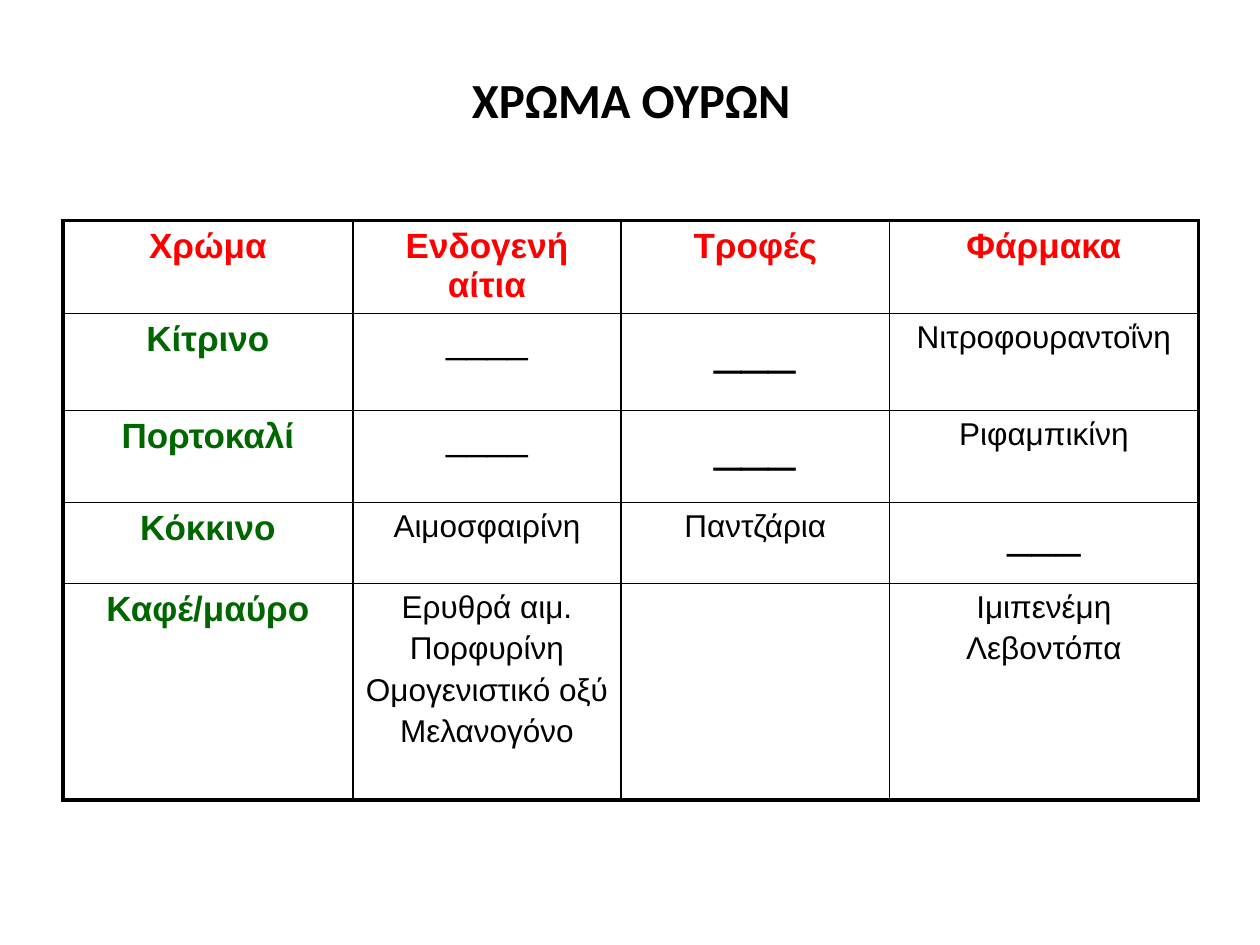
from dataclasses import dataclass

from lxml import etree
from pptx import Presentation
from pptx.dml.color import RGBColor
from pptx.enum import text
from pptx.oxml.ns import qn
from pptx.util import Inches, Pt


@dataclass(frozen=True)
class Theme:
    black: str = "000000"
    red: str = "FF0000"
    green: str = "006600"
    title: int = 28
    head: int = 20
    body: int = 18
    thin: float = 1
    thick: float = 2.25


THEME = Theme()
COLS = [2.3, 2.13, 2.13, 2.45]
ROWS = [0.74, 0.77, 0.73, 0.64, 1.72]
CELLS = [
    ["Χρώμα", "Ενδογενή αίτια", "Τροφές", "Φάρμακα"],
    ["Κίτρινο", "____", "___", "Νιτροφουραντοΐνη"],
    ["Πορτοκαλί", "____", "___", "Ριφαμπικίνη"],
    ["Κόκκινο", "Αιμοσφαιρίνη", "Παντζάρια", "___"],
    ["Καφέ/μαύρο", "Ερυθρά αιμ.\nΠορφυρίνη\nΟμογενιστικό οξύ\nΜελανογόνο",
     "", "Ιμιπενέμη\nΛεβοντόπα"],
]
DASHES = {1: 21, 2: 28, 3: 25}  # size of the dash in each column


def style(para, face, size, color, bold):
    para.alignment = text.PP_ALIGN.CENTER
    font = para.font
    font.name, font.size, font.bold = face, Pt(size), bold
    font.color.rgb = RGBColor.from_string(color)


def add_title(slide, words):
    title = slide.shapes.title
    title.left, title.top = Inches(0.51), Inches(0.36)
    title.width, title.height = Inches(9), Inches(0.85)
    frame = title.text_frame
    frame.text = words
    frame.vertical_anchor = text.MSO_ANCHOR.MIDDLE
    style(frame.paragraphs[0], "Calibri", THEME.title, THEME.black, True)


def set_border(cell, side, width):
    props = cell._tc.get_or_add_tcPr()
    line = etree.SubElement(props, qn(f"a:ln{side}"), w=str(Pt(width)))
    fill = etree.SubElement(line, qn("a:solidFill"))
    etree.SubElement(fill, qn("a:srgbClr"), val=THEME.black)


def look(row, col, words):
    """Return size, colour and weight of a cell's text."""
    if row == 0:
        return THEME.head, THEME.red, True
    if col == 0:
        return THEME.head, THEME.green, True
    size = DASHES[col] if words.startswith("_") else THEME.body
    return size, THEME.black, False


def fill_cell(cell, row, col, words):
    outer = {"L": col == 0, "R": col == len(COLS) - 1,
             "T": row == 0, "B": row == len(ROWS) - 1}
    for side, edge in outer.items():
        set_border(cell, side, THEME.thick if edge else THEME.thin)
    cell.fill.background()
    cell.text = words
    size, color, bold = look(row, col, words)
    for para in cell.text_frame.paragraphs:
        style(para, "Arial", size, color, bold)
        para.space_before = Pt(size * 0.2)


def add_grid(slide):
    table = slide.shapes.add_table(
        len(ROWS), len(COLS), Inches(0.5), Inches(1.75),
        Inches(sum(COLS)), Inches(sum(ROWS))).table
    table.first_row = table.horz_banding = False
    for col, width in zip(table.columns, COLS):
        col.width = Inches(width)
    for row, height in zip(table.rows, ROWS):
        row.height = Inches(height)
    for r, line in enumerate(CELLS):
        for c, words in enumerate(line):
            fill_cell(table.cell(r, c), r, c, words)


def main():
    deck = Presentation()
    deck.slide_width, deck.slide_height = Inches(10), Inches(7.5)
    slide = deck.slides.add_slide(deck.slide_layouts[5])
    add_title(slide, "ΧΡΩΜΑ ΟΥΡΩΝ")
    add_grid(slide)
    deck.save("out.pptx")


if __name__ == "__main__":
    main()
